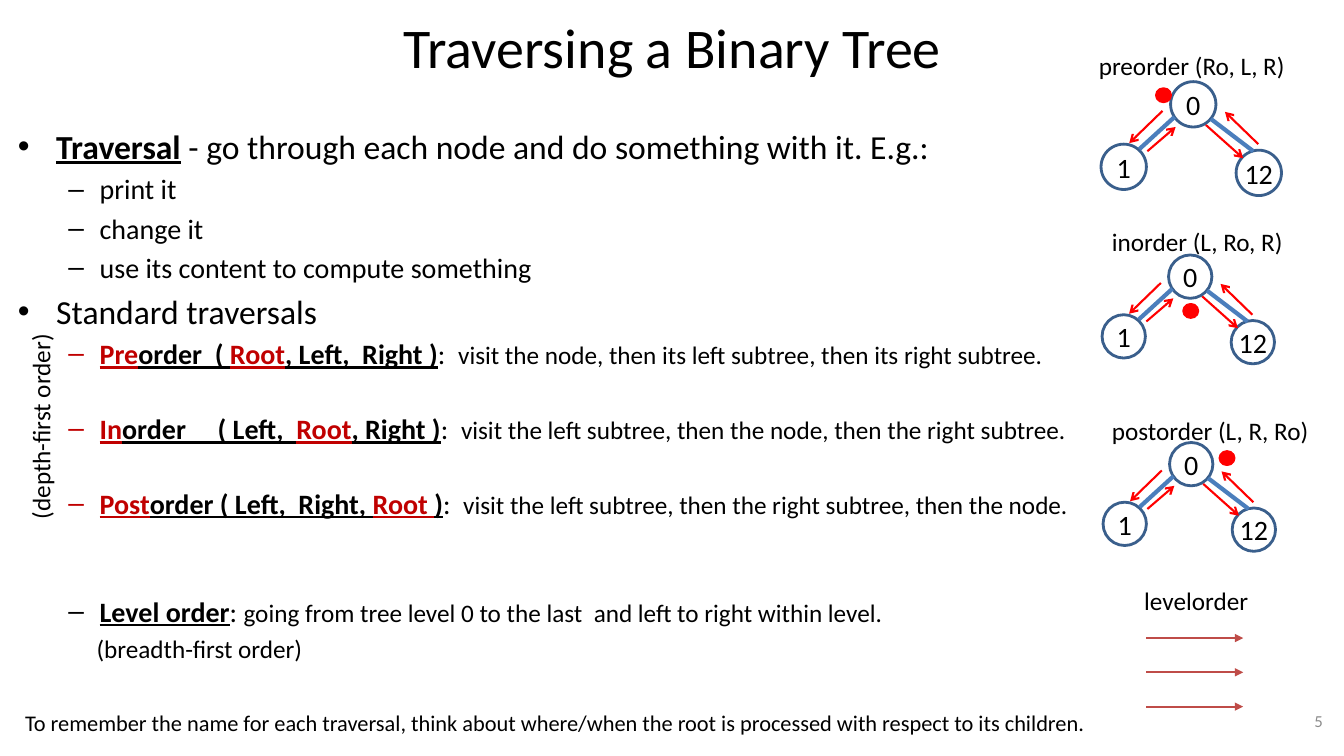
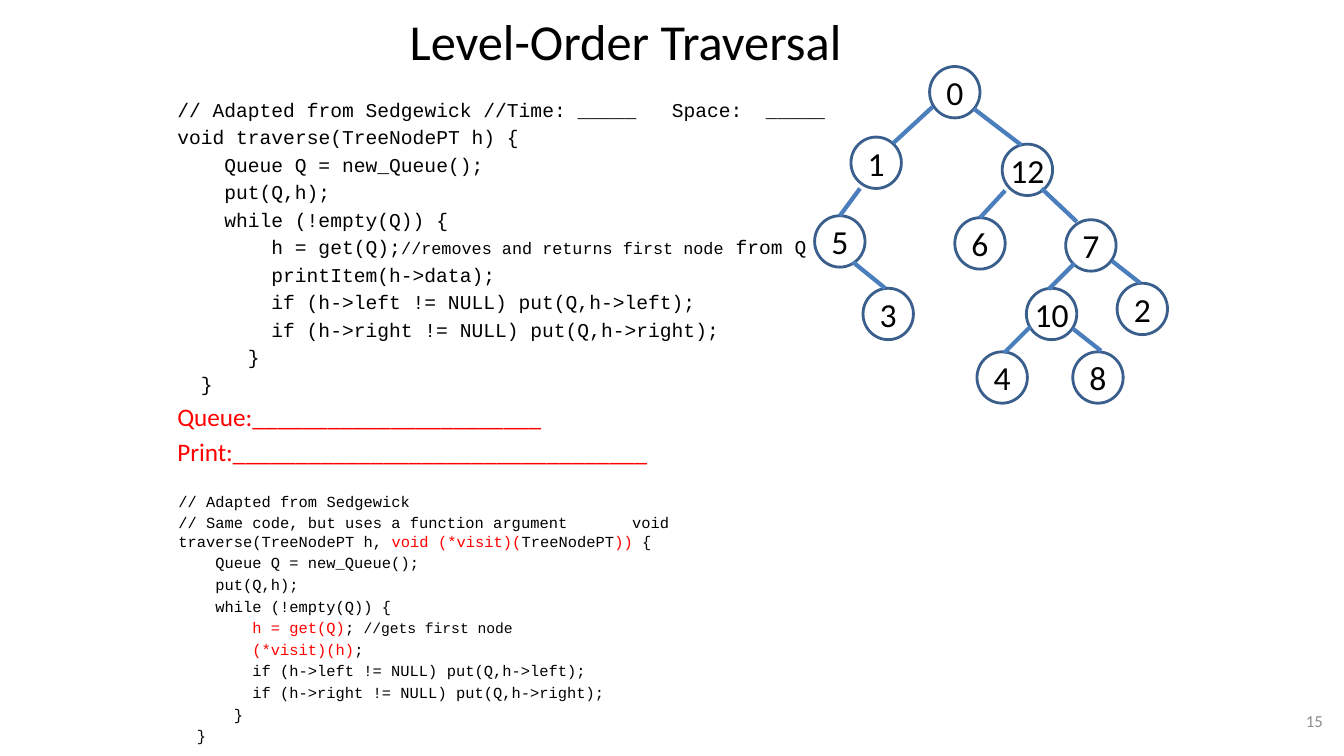
from dataclasses import dataclass

from lxml import etree
from pptx import Presentation
from pptx.dml.color import RGBColor
from pptx.enum.shapes import MSO_CONNECTOR, MSO_SHAPE
from pptx.enum.text import MSO_ANCHOR, PP_ALIGN
from pptx.oxml.ns import qn
from pptx.util import Inches, Pt

OVAL = MSO_SHAPE.OVAL
STRAIGHT = MSO_CONNECTOR.STRAIGHT
TOP, MIDDLE = MSO_ANCHOR.TOP, MSO_ANCHOR.MIDDLE
LEFT, CENTER, RIGHT = PP_ALIGN.LEFT, PP_ALIGN.CENTER, PP_ALIGN.RIGHT


@dataclass(frozen=True)
class Theme:
    sans: str = "Calibri"
    mono: str = "Courier New"
    bullet: str = "Arial"
    black: str = "000000"
    gray: str = "8C8C8C"
    red: str = "FF0000"
    dark_red: str = "C00000"
    outline: str = "3A5F8C"
    edge: str = "4B7EBC"
    level_arrow: str = "BF4C48"
    title: float = 40
    small_title: float = 36
    heading: float = 24
    item: float = 20
    label: float = 18
    note: float = 16
    code: float = 14
    code_comment: float = 12
    small_code: float = 11
    small_comment: float = 10.5
    page_number: float = 12


THEME = Theme()


@dataclass(frozen=True)
class Span:
    text: str
    size: float
    color: str = THEME.black
    font: str = THEME.sans
    strong: bool = False


@dataclass(frozen=True)
class Para:
    spans: list[Span]
    before: float = 0
    margin: float = 0
    hanging: float = 0
    bullet: str = ""
    align: PP_ALIGN = LEFT


@dataclass(frozen=True)
class Node:
    text: str
    left: float
    top: float


@dataclass(frozen=True)
class Segment:
    x1: float
    y1: float
    x2: float
    y2: float


@dataclass(frozen=True)
class MiniTree:
    label: str
    label_left: float
    label_top: float
    label_width: float
    left: float
    top: float
    size: float
    dot_left: float
    dot_top: float


MINI_NODES = [Node("0", 0, 0), Node("1", -0.69, 0.62), Node("12", 0.65, 0.68)]
MINI_EDGES = [Segment(0.04, 0.35, -0.31, 0.67), Segment(0.4, 0.37, 0.82, 0.69)]
MINI_ARROWS = [
    Segment(-0.08, 0.29, -0.41, 0.61), Segment(-0.23, 0.69, 0.05, 0.45),
    Segment(0.35, 0.43, 0.72, 0.76), Segment(0.87, 0.62, 0.54, 0.3),
]
MINI_SIZE = 0.45
MINI_TREES = [
    MiniTree("preorder (Ro, L, R)", 10.8, 0.45, 2.07, 11.61, 0.81, 0.45, 11.47, 0.88),
    MiniTree("inorder (L, Ro, R)", 10.93, 2.2, 1.92, 11.59, 2.53, 0.43, 11.74, 3.02),
    MiniTree("postorder (L, R, Ro)", 10.93, 4.07, 2.17, 11.6, 4.39, 0.43, 12.1, 4.48),
]
TREE_NODES = [
    Node("0", 9.22, 0.66), Node("1", 8.44, 1.36), Node("7", 10.57, 2.18),
    Node("12", 9.94, 1.43), Node("6", 9.47, 2.16), Node("5", 8.08, 2.14),
    Node("3", 8.56, 2.86), Node("10", 10.18, 2.86), Node("2", 11.08, 2.81),
    Node("4", 9.69, 3.49), Node("8", 10.64, 3.49),
]
TREE_EDGES = [
    Segment(9.25, 1.06, 8.86, 1.42), Segment(9.66, 1.08, 10.13, 1.44),
    Segment(10.33, 1.87, 10.68, 2.2), Segment(9.97, 1.89, 9.72, 2.16),
    Segment(8.53, 1.87, 8.33, 2.14), Segment(8.46, 2.6, 8.78, 2.86),
    Segment(10.66, 2.61, 10.4, 2.87), Segment(10.22, 3.24, 9.96, 3.5),
    Segment(11.03, 2.59, 11.31, 2.81), Segment(10.64, 3.26, 10.92, 3.48),
]


def rgb(color: str) -> RGBColor:
    return RGBColor.from_string(color)


def fill_paragraph(paragraph, para: Para) -> None:
    paragraph.alignment = para.align
    paragraph.space_before = Pt(para.before)
    properties = paragraph._p.get_or_add_pPr()
    properties.set("marL", str(Inches(para.margin)))
    properties.set("indent", str(Inches(-para.hanging)))
    if para.bullet:
        etree.SubElement(properties, qn("a:buFont"), typeface=THEME.bullet)
        etree.SubElement(properties, qn("a:buChar"), char=para.bullet)
    for span in para.spans:
        run = paragraph.add_run()
        run.text = span.text
        run.font.name = span.font
        run.font.size = Pt(span.size)
        run.font.color.rgb = rgb(span.color)
        run.font.bold = run.font.underline = span.strong


def add_text(page, left: float, top: float, width: float, height: float,
             paras: list[Para], anchor: MSO_ANCHOR = TOP, wrap: bool = True):
    box = page.shapes.add_textbox(Inches(left), Inches(top), Inches(width), Inches(height))
    frame = box.text_frame
    frame.word_wrap = wrap
    frame.vertical_anchor = anchor
    for index, para in enumerate(paras):
        fill_paragraph(frame.add_paragraph() if index else frame.paragraphs[0], para)
    return box


def add_label(page, text: str, left: float, top: float, width: float,
              size: float = THEME.label):
    return add_text(page, left, top, width, 0.4, [Para([Span(text, size)])], wrap=False)


def add_title(page, text: str, left: float, top: float, width: float, size: float) -> None:
    add_text(page, left, top, width, 0.75, [Para([Span(text, size)], align=CENTER)], MIDDLE)


def add_page_number(page, number: int) -> None:
    span = Span(str(number), THEME.page_number, THEME.gray)
    add_text(page, 10.11, 6.95, 3.11, 0.4, [Para([span], align=RIGHT)], MIDDLE)


def add_oval(page, left: float, top: float, width: float, height: float, color: str):
    oval = page.shapes.add_shape(OVAL, Inches(left), Inches(top), Inches(width), Inches(height))
    oval.shadow.inherit = False
    oval.fill.background()
    oval.line.color.rgb = rgb(color)
    oval.line.width = Pt(2)
    return oval


def add_node(page, node: Node, width: float, height: float, size: float) -> None:
    oval = add_oval(page, node.left, node.top, width, height, THEME.outline)
    frame = oval.text_frame
    frame.margin_left = frame.margin_right = frame.margin_top = frame.margin_bottom = 0
    frame.word_wrap = False
    frame.vertical_anchor = MIDDLE
    fill_paragraph(frame.paragraphs[0], Para([Span(node.text, size)], align=CENTER))


def add_line(page, segment: Segment, color: str, width: float, arrowhead: str = "") -> None:
    line = page.shapes.add_connector(STRAIGHT, Inches(segment.x1), Inches(segment.y1),
                                     Inches(segment.x2), Inches(segment.y2))
    line.line.color.rgb = rgb(color)
    line.line.width = Pt(width)
    properties = line._element.spPr
    if arrowhead:
        etree.SubElement(properties.find(qn("a:ln")), qn("a:tailEnd"), type=arrowhead)
    etree.SubElement(properties, qn("a:effectLst"))


def add_mini_tree(page, tree: MiniTree) -> None:
    scale = tree.size / MINI_SIZE

    def place(segment: Segment) -> Segment:
        return Segment(tree.left + segment.x1 * scale, tree.top + segment.y1 * scale,
                       tree.left + segment.x2 * scale, tree.top + segment.y2 * scale)

    for node in MINI_NODES:
        placed = Node(node.text, tree.left + node.left * scale, tree.top + node.top * scale)
        add_node(page, placed, tree.size, tree.size, THEME.item)
    for edge in MINI_EDGES:
        add_line(page, place(edge), THEME.edge, 3)
    for arrow in MINI_ARROWS:
        add_line(page, place(arrow), THEME.red, 1.5, "arrow")
    dot = add_oval(page, tree.dot_left, tree.dot_top, 0.14, 0.13, THEME.red)
    dot.fill.solid()
    dot.fill.fore_color.rgb = rgb(THEME.red)
    add_label(page, tree.label, tree.label_left, tree.label_top, tree.label_width)


def heading(*spans: Span) -> Para:
    return Para(list(spans), 4.8, 0.38, 0.38, "•")


def item(*spans: Span, before: float = 4) -> Para:
    return Para(list(spans), before, 0.81, 0.31, "–")


def order(parts: list[str], meaning: str, before: float = 29.5) -> Para:
    colors = [THEME.dark_red, THEME.black]
    name = [Span(text, THEME.item, colors[index % 2], strong=True)
            for index, text in enumerate(parts)]
    return item(*name, Span(":  ", THEME.item), Span(meaning, THEME.label), before=before)


def code(text: str, columns: int = 0, rest: tuple[Span, ...] = (),
         color: str = THEME.black, size: float = THEME.code) -> Para:
    first = Span(text, size, color, THEME.mono)
    return Para([first, *rest], size * 0.2, columns * 0.6 * size / 72)


def small(text: str, columns: int = 0, rest: tuple[Span, ...] = (),
          color: str = THEME.black) -> Para:
    return code(text, columns, rest, color, THEME.small_code)


def small_span(text: str, color: str = THEME.black, size: float = THEME.small_code) -> Span:
    return Span(text, size, color, THEME.mono)


def build_traversals(page) -> None:
    add_title(page, "Traversing a Binary Tree", 0.67, 0.08, 12, THEME.title)
    tasks = ["print it", "change it", "use its content to compute something"]
    add_text(page, 0.08, 1.2, 10.73, 5.97, [
        heading(Span("Traversal", THEME.heading, strong=True),
                Span(" - go through each node and do something with it. E.g.:", THEME.heading)),
        *[item(Span(task, THEME.item)) for task in tasks],
        heading(Span("Standard traversals", THEME.heading)),
        order(["Pre", "order  ( ", "Root", ", Left,  Right )"],
              "visit the node, then its left subtree, then its right subtree.", 4),
        order(["In", "order     ( Left,  ", "Root", ", Right )"],
              "visit the left subtree, then the node, then the right subtree."),
        order(["Post", "order ( Left,  Right, ", "Root ", ")"],
              "visit the left subtree, then the right subtree, then the node."),
        item(Span("Level order", THEME.item, strong=True), Span(": ", THEME.item),
             Span("going from tree level 0 to the last  and left to right within level.",
                  THEME.label), before=53),
        Para([Span("(breadth-first order)", THEME.label)], 4, 0.78),
    ])
    add_page_number(page, 5)
    for tree in MINI_TREES:
        add_mini_tree(page, tree)
    add_label(page, "levelorder", 11.25, 5.76, 1.24)
    for level in range(3):
        y = 6.33 + level * 0.34
        add_line(page, Segment(11.37, y, 12.33, y), THEME.level_arrow, 1.5, "triangle")
    add_label(page, "(depth-first order)", -0.64, 4.01, 2.08).rotation = 270
    add_label(page, "To remember the name for each traversal, think about where/when the root "
              "is processed with respect to its children.", 0.15, 6.99, 10.8, THEME.note)


def build_level_order(page) -> None:
    add_title(page, "Level-Order Traversal", 3.79, 0.03, 4.83, THEME.small_title)
    blanks = ["Queue:" + "_" * 23, "Print:" + "_" * 33]
    add_text(page, 1.66, 0.92, 6.78, 4.02, [
        code("// Adapted from Sedgewick //Time: _____   Space:  _____"),
        code("void traverse(TreeNodePT h) {"),
        code("Queue Q = new_Queue();", 4),
        code("put(Q,h);", 4),
        code("while (!empty(Q)) {", 4),
        code("h = get(Q);", 8, (
            small_span("//removes and returns first node", size=THEME.code_comment),
            small_span(" from Q", size=THEME.code))),
        code("printItem(h->data);", 8),
        code("if (h->left != NULL) put(Q,h->left);", 8),
        code("if (h->right != NULL) put(Q,h->right);", 8),
        code("}", 6),
        code("}", 2),
        *[Para([Span(blank, THEME.label, THEME.red)], 3.6) for blank in blanks],
    ])
    add_page_number(page, 15)
    for node in TREE_NODES:
        add_node(page, node, 0.5, 0.51, THEME.heading)
    for edge in TREE_EDGES:
        add_line(page, edge, THEME.edge, 3)
    add_text(page, 1.67, 4.83, 5.41, 2.69, [
        small("// Adapted from Sedgewick"),
        small("// Same code, but uses a function argument       void traverse(TreeNodePT h, ",
              rest=(small_span("void (*visit)(", THEME.red), small_span("TreeNodePT"),
                    small_span("))", THEME.red), small_span(" {"))),
        small("Queue Q = new_Queue();", 4),
        small("put(Q,h);", 4),
        small("while (!empty(Q)) {", 4),
        small("h = get(Q)", 8, (small_span("; "), small_span(
            "//gets first node", size=THEME.small_comment)), THEME.red),
        small("(*visit)(h)", 8, (small_span(";"),), THEME.red),
        small("if (h->left != NULL) put(Q,h->left);", 8),
        small("if (h->right != NULL) put(Q,h->right);", 8),
        small("}", 6),
        small("}", 2),
    ])


def main() -> None:
    deck = Presentation()
    deck.slide_width, deck.slide_height = Inches(13.33), Inches(7.5)
    for build in (build_traversals, build_level_order):
        build(deck.slides.add_slide(deck.slide_layouts[6]))
    deck.save("out.pptx")


if __name__ == "__main__":
    main()
